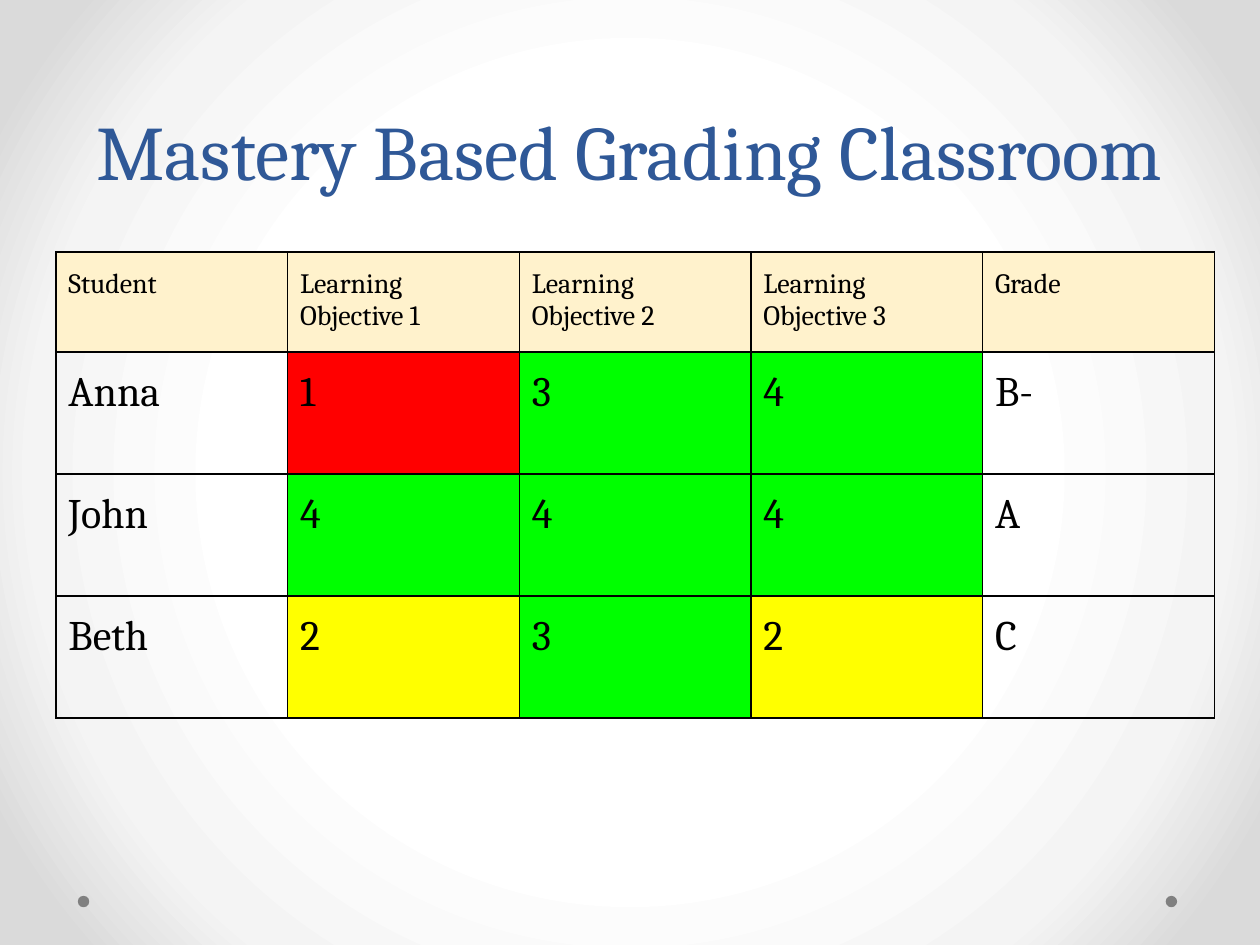
from dataclasses import dataclass

import pptx
import pptx.dml.color
import pptx.enum.shapes
import pptx.enum.text
import pptx.oxml
import pptx.oxml.ns
import pptx.slide
import pptx.table
import pptx.text.text
import pptx.util
from pptx.util import Cm

FONT = "Cambria"
BLACK = "000000"
HEADER_FILL = "FFF2CC"
SCORE_FILLS = {"1": "FF0000", "2": "FFFF00", "3": "00FF00", "4": "00FF00"}
BACKGROUND_STOPS = ((50, "FFFFFF"), (76, "F4F4F4"), (92, "DADADA"))
HEADERS = ("Student", "Learning Objective 1", "Learning Objective 2",
           "Learning Objective 3", "Grade")
COLUMN_WIDTH = Cm(4.67)
HEADER_HEIGHT = Cm(1.7)
STUDENT_HEIGHT = Cm(2.46)


@dataclass
class Student:
    name: str
    scores: tuple[str, ...]
    grade: str


STUDENTS = (
    Student("Anna", ("1", "3", "4"), "B-"),
    Student("John", ("4", "4", "4"), "A"),
    Student("Beth", ("2", "3", "2"), "C"),
)


def color(value: str) -> pptx.dml.color.RGBColor:
    return pptx.dml.color.RGBColor.from_string(value)


def add_run(paragraph: pptx.text.text._Paragraph, text: str, size: int, value: str) -> None:
    run = paragraph.add_run()
    run.text = text
    run.font.name = FONT
    run.font.size = pptx.util.Pt(size)
    run.font.color.rgb = color(value)


def set_background(slide: pptx.slide.Slide) -> None:
    stops = "".join(f'<a:gs pos="{position * 1000}"><a:srgbClr val="{value}"/></a:gs>'
                    for position, value in BACKGROUND_STOPS)
    background = pptx.oxml.parse_xml(
        f'<p:bg {pptx.oxml.ns.nsdecls("p", "a")}><p:bgPr><a:gradFill><a:gsLst>{stops}</a:gsLst>'
        '<a:path path="circle"><a:fillToRect l="50000" t="50000" r="50000" b="50000"/></a:path>'
        '</a:gradFill><a:effectLst/></p:bgPr></p:bg>')
    slide.element.find(pptx.oxml.ns.qn("p:cSld")).insert(0, background)


def add_dot(slide: pptx.slide.Slide, left: pptx.util.Length) -> None:
    dot = slide.shapes.add_shape(pptx.enum.shapes.MSO_SHAPE.OVAL,
                                 left, Cm(18.06), Cm(0.23), Cm(0.23))
    dot.shadow.inherit = False
    dot.fill.solid()
    dot.fill.fore_color.rgb = color("808080")
    dot.line.fill.background()


def add_title(slide: pptx.slide.Slide, text: str) -> None:
    frame = slide.shapes.add_textbox(0, Cm(1.65), Cm(25.4), Cm(2.13)).text_frame
    frame.word_wrap = True
    frame.vertical_anchor = pptx.enum.text.MSO_ANCHOR.TOP
    frame.margin_left = frame.margin_right = Cm(0.25)
    frame.margin_top = frame.margin_bottom = Cm(0.25)
    paragraph = frame.paragraphs[0]
    paragraph.alignment = pptx.enum.text.PP_ALIGN.CENTER
    paragraph.line_spacing = pptx.util.Pt(58)
    add_run(paragraph, text, 44, "2F5897")


def fill_cell(cell: pptx.table._Cell, text: str, size: int, fill: str | None) -> None:
    cell.margin_left = cell.margin_right = Cm(0.25)
    cell.margin_top = cell.margin_bottom = Cm(0.33)
    properties = cell._tc.get_or_add_tcPr()
    for side in ("lnL", "lnR", "lnT", "lnB"):
        properties.append(pptx.oxml.parse_xml(
            f'<a:{side} {pptx.oxml.ns.nsdecls("a")} w="{pptx.util.Pt(0.75)}">'
            f'<a:solidFill><a:srgbClr val="{BLACK}"/></a:solidFill></a:{side}>'))
    if fill:
        cell.fill.solid()
        cell.fill.fore_color.rgb = color(fill)
    else:
        cell.fill.background()
    add_run(cell.text_frame.paragraphs[0], text, size, BLACK)


def add_grades(slide: pptx.slide.Slide) -> None:
    table = slide.shapes.add_table(
        len(STUDENTS) + 1, len(HEADERS), Cm(1.13), Cm(5.08),
        COLUMN_WIDTH * len(HEADERS), HEADER_HEIGHT + STUDENT_HEIGHT * len(STUDENTS)).table
    table.first_row = table.horz_banding = False
    for column in table.columns:
        column.width = COLUMN_WIDTH

    # Header row
    table.rows[0].height = HEADER_HEIGHT
    for index, header in enumerate(HEADERS):
        fill_cell(table.cell(0, index), header, 16, HEADER_FILL)

    # One row per student, scores coloured by level
    for row, student in enumerate(STUDENTS, start=1):
        table.rows[row].height = STUDENT_HEIGHT
        for index, text in enumerate((student.name, *student.scores, student.grade)):
            fill_cell(table.cell(row, index), text, 24, SCORE_FILLS.get(text))


def main() -> None:
    presentation = pptx.Presentation()
    presentation.slide_width = Cm(25.4)
    presentation.slide_height = Cm(19.05)
    slide = presentation.slides.add_slide(presentation.slide_layouts[6])

    # Backdrop
    set_background(slide)
    for left in (Cm(23.5), Cm(1.57)):
        add_dot(slide, left)

    # Content
    add_title(slide, "Mastery Based Grading Classroom")
    add_grades(slide)
    presentation.save("out.pptx")


if __name__ == "__main__":
    main()
